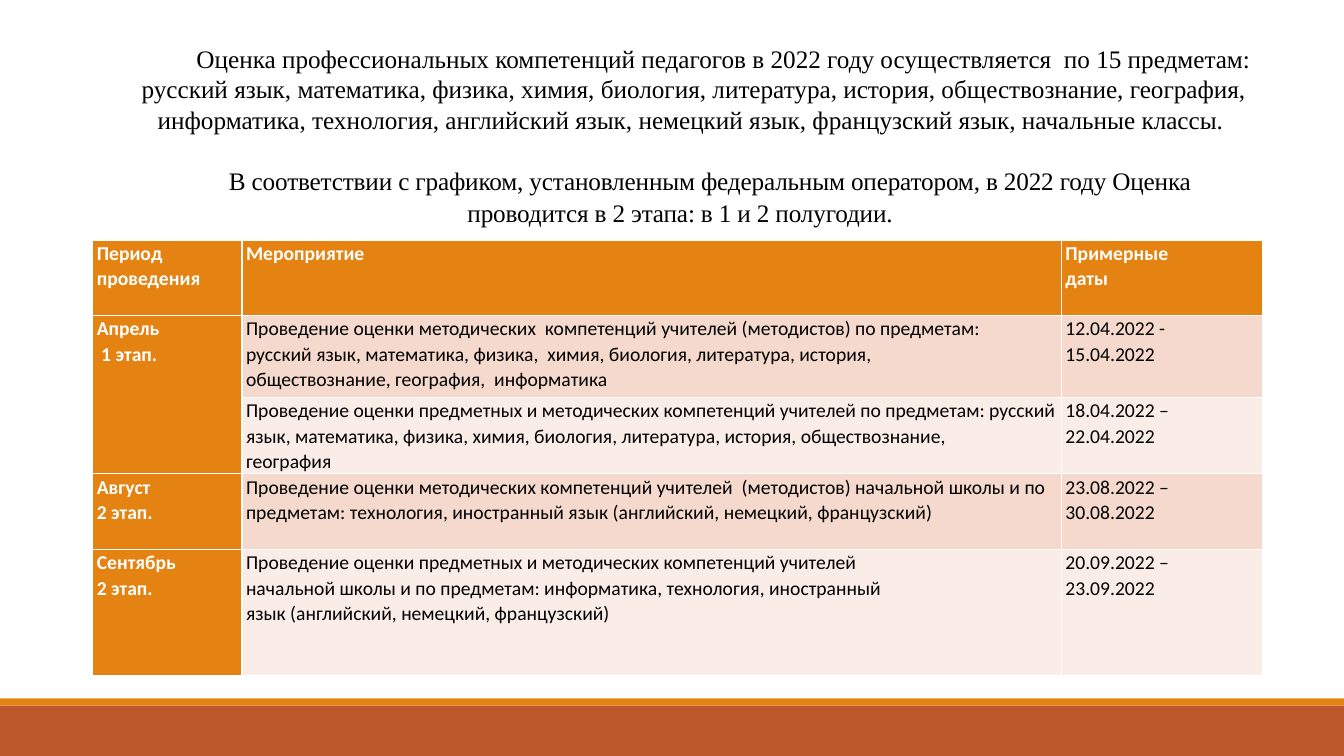
from pptx import Presentation
from pptx.dml.color import RGBColor
from pptx.enum.shapes import MSO_SHAPE
from pptx.enum.text import PP_ALIGN
from pptx.util import Cm, Pt

ORANGE = RGBColor(0xE4, 0x83, 0x12)
RUST = RGBColor(0xBD, 0x58, 0x2C)
PEACH = RGBColor(0xF5, 0xD9, 0xCC)
PALE = RGBColor(0xFA, 0xED, 0xE7)
WHITE = RGBColor(0xFF, 0xFF, 0xFF)
BLACK = RGBColor(0, 0, 0)

WIDE, HIGH = 33.87, 19.05
BANDS = [(17.78, 1.27, RUST), (17.6, 0.18, ORANGE)]
INTROS = [
    ((2.11, 0.97, 30.76, 2.57), 1, 0,
     "Оценка профессиональных компетенций педагогов в 2022 году осуществляется  по 15 предметам: "
     "русский язык, математика, физика, химия, биология, литература, история, обществознание, "
     "география, информатика, технология, английский язык, немецкий язык, французский язык, "
     "начальные классы. "),
    ((2.74, 3.99, 28.8, 1.85), 1.07, -10,
     "В соответствии с графиком, установленным федеральным оператором, в 2022 году Оценка "
     "проводится в 2 этапа: в 1 и 2 полугодии."),
]
LEFT, TOP = 2.34, 6.05
COLS = [3.76, 20.65, 5.06]
PLAN = [
    (1.9, ["Период проведения"], ["Мероприятие"], ["Примерные", "даты"]),
    (2.07, ["Апрель", " 1 этап."],
     ["Проведение оценки методических  компетенций учителей (методистов) по предметам:",
      "русский язык, математика, физика,  химия, биология, литература, история,",
      "обществознание, география,  информатика"],
     ["12.04.2022 -", "15.04.2022"]),
    (1.92, [],
     ["Проведение оценки предметных и методических компетенций учителей по предметам: русский "
      "язык, математика, физика, химия, биология, литература, история, обществознание,",
      "география"],
     ["18.04.2022 –", "22.04.2022"]),
    (1.91, ["Август", "2 этап."],
     ["Проведение оценки методических компетенций учителей  (методистов) начальной школы и по "
      "предметам: технология, иностранный язык (английский, немецкий, французский)"],
     ["23.08.2022 –", "30.08.2022"]),
    (3.18, ["Сентябрь", "2 этап."],
     ["Проведение оценки предметных и методических компетенций учителей",
      "начальной школы и по предметам: информатика, технология, иностранный",
      "язык (английский, немецкий, французский)"],
     ["20.09.2022 –", "23.09.2022"]),
]


def add_run(para, text, face, size, color, bold=False):
    """Add one styled run to a paragraph."""
    run = para.add_run()
    run.text = text
    run.font.name, run.font.size, run.font.bold = face, Pt(size), bold
    run.font.color.rgb = color
    return run


def add_band(slide, top, high, color):
    """Draw a full-width band at the foot."""
    band = slide.shapes.add_shape(MSO_SHAPE.RECTANGLE, 0, Cm(top), Cm(WIDE), Cm(high))
    band.shadow.inherit = False
    band.fill.solid()
    band.fill.fore_color.rgb = color
    band.line.fill.background()


def add_intro(slide, place, lead, track, text):
    """Add a centred paragraph with a first-line indent."""
    frame = slide.shapes.add_textbox(*map(Cm, place)).text_frame
    frame.word_wrap = True
    para = frame.paragraphs[0]
    para.alignment = PP_ALIGN.CENTER
    para.line_spacing = lead
    props = para._p.get_or_add_pPr()
    props.set("marL", "0")
    props.set("indent", str(Cm(1.5)))
    run = add_run(para, text, "Times New Roman", 18, BLACK)
    run.font._element.set("spc", str(track))


def fill_cell(cell, lines, color, head):
    """Fill a cell with its colour and lines."""
    cell.fill.solid()
    cell.fill.fore_color.rgb = color
    cell.margin_left = cell.margin_right = Cm(0.1)
    cell.margin_top = cell.margin_bottom = 0
    frame = cell.text_frame
    for num, line in enumerate(lines):
        para = frame.add_paragraph() if num else frame.paragraphs[0]
        para.line_spacing = 1.07
        add_run(para, line, "Calibri", 14, WHITE if head else BLACK, head)


def add_plan(slide):
    """Build the schedule table."""
    size = map(Cm, (LEFT, TOP, sum(COLS), sum(row[0] for row in PLAN)))
    table = slide.shapes.add_table(len(PLAN), len(COLS), *size).table
    for col, wide in zip(table.columns, COLS):
        col.width = Cm(wide)
    for r, (high, *cells) in enumerate(PLAN):
        table.rows[r].height = Cm(high)
        for c, lines in enumerate(cells):
            head = r == 0 or c == 0
            color = ORANGE if head else PEACH if r % 2 else PALE
            fill_cell(table.cell(r, c), lines, color, head)
    table.cell(1, 0).merge(table.cell(2, 0))


def main():
    """Build and save the slide."""
    deck = Presentation()
    deck.slide_width, deck.slide_height = Cm(WIDE), Cm(HIGH)
    slide = deck.slides.add_slide(deck.slide_layouts[6])
    for band in BANDS:
        add_band(slide, *band)
    for intro in INTROS:
        add_intro(slide, *intro)
    add_plan(slide)
    deck.save("out.pptx")


if __name__ == "__main__":
    main()
